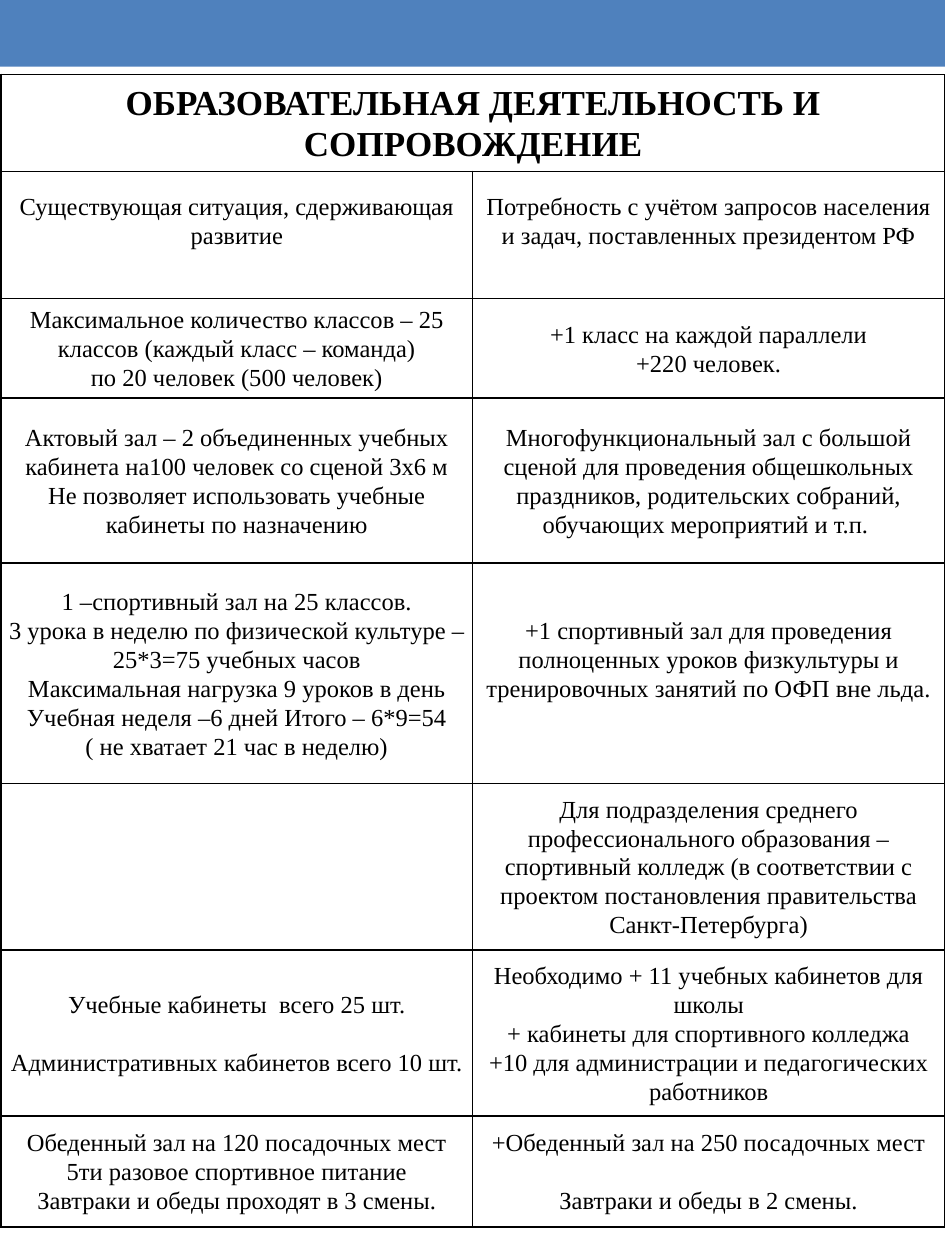
"""Build a one-slide table of school needs under a blue band."""
from lxml.etree import SubElement
from pptx import Presentation
from pptx.dml.color import RGBColor
from pptx.enum.shapes import MSO_SHAPE
from pptx.enum.text import MSO_ANCHOR, PP_ALIGN
from pptx.oxml.ns import qn
from pptx.util import Inches, Pt

BLUE = RGBColor(0x4F, 0x81, 0xBD)
BLACK = RGBColor(0, 0, 0)
FONT = "Times New Roman"
LINE = 0.23
COLS = [3.74, 3.75]
HEIGHTS = [0.77, 1.01, 0.79, 1.31, 1.75, 1.32, 1.32, 0.88]
RAISED = {(1, 0), (1, 1), (4, 1)}
GAPS = {(6, 0, 1), (7, 1, 1)}
ROWS = [
    [["ОБРАЗОВАТЕЛЬНАЯ ДЕЯТЕЛЬНОСТЬ И СОПРОВОЖДЕНИЕ"], []],
    [["Существующая ситуация, сдерживающая развитие"],
     ["Потребность с учётом запросов населения и задач, поставленных президентом РФ"]],
    [["Максимальное количество классов – 25 классов (каждый класс – команда)",
      "по 20 человек (500 человек)"],
     ["+1 класс на каждой параллели", "+220 человек."]],
    [["Актовый зал – 2 объединенных учебных кабинета на100 человек со сценой 3х6 м",
      "Не позволяет использовать учебные кабинеты по назначению"],
     ["Многофункциональный зал с большой сценой для проведения общешкольных "
      "праздников, родительских собраний, обучающих мероприятий и т.п. "]],
    [["1 –спортивный зал на 25 классов.",
      "3 урока в неделю по физической культуре – 25*3=75 учебных часов",
      "Максимальная нагрузка 9 уроков в день",
      "Учебная неделя –6 дней Итого – 6*9=54 ( не хватает 21 час в неделю)"],
     ["+1 спортивный зал для проведения полноценных уроков физкультуры и "
      "тренировочных занятий по ОФП вне льда."]],
    [[],
     ["Для подразделения среднего профессионального образования – спортивный колледж "
      "(в соответствии с проектом постановления правительства Санкт-Петербурга)"]],
    [["Учебные кабинеты  всего 25 шт.", "Административных кабинетов всего 10 шт."],
     ["Необходимо + 11 учебных кабинетов для школы",
      "+ кабинеты для спортивного колледжа",
      "+10 для администрации и педагогических работников"]],
    [["Обеденный зал на 120 посадочных мест", "5ти разовое спортивное питание",
      "Завтраки и обеды проходят в 3 смены."],
     ["+Обеденный зал на 250 посадочных мест", "Завтраки и обеды в 2 смены."]],
]


def add_borders(cell):
    """Draw a thin black line on each side of a cell."""
    tc_pr = cell._tc.get_or_add_tcPr()
    for i, side in enumerate(("a:lnL", "a:lnR", "a:lnT", "a:lnB")):
        ln = SubElement(tc_pr, qn(side), w=str(Pt(1)))
        fill = SubElement(ln, qn("a:solidFill"))
        SubElement(fill, qn("a:srgbClr"), val=str(BLACK))
        tc_pr.insert(i, ln)


prs = Presentation()
prs.slide_width, prs.slide_height = Inches(7.5), Inches(10)
s = prs.slides.add_slide(prs.slide_layouts[6])

band = s.shapes.add_shape(MSO_SHAPE.RECTANGLE, 0, 0, prs.slide_width, Inches(0.53))
band.shadow.inherit = False
band.fill.solid()
band.fill.fore_color.rgb = BLUE
band.line.fill.background()

table = s.shapes.add_table(len(ROWS), len(COLS), Inches(0.01), Inches(0.59),
                           Inches(sum(COLS)), Inches(sum(HEIGHTS))).table
table.first_row = table.horz_banding = False
for column, width in zip(table.columns, COLS):
    column.width = Inches(width)
for row, height in zip(table.rows, HEIGHTS):
    row.height = Inches(height)
table.cell(0, 0).merge(table.cell(0, 1))

for i, row in enumerate(ROWS):
    for j, lines in enumerate(row):
        cell = table.cell(i, j)
        cell.fill.background()
        add_borders(cell)
        cell.vertical_anchor = MSO_ANCHOR.MIDDLE
        cell.margin_left = cell.margin_right = Inches(0.05)
        cell.margin_top = 0
        cell.margin_bottom = Inches(LINE) if (i, j) in RAISED else 0
        tf = cell.text_frame
        for k, line in enumerate(lines):
            p = tf.add_paragraph() if k else tf.paragraphs[0]
            p.alignment = PP_ALIGN.CENTER
            p.line_spacing = 1.07
            if (i, j, k) in GAPS:
                p.space_before = Inches(LINE)
            r = p.add_run()
            r.text = line
            r.font.name = FONT
            r.font.size = Pt(14 if i else 20)
            r.font.bold = i == 0
            r.font.color.rgb = BLACK

prs.save("out.pptx")
